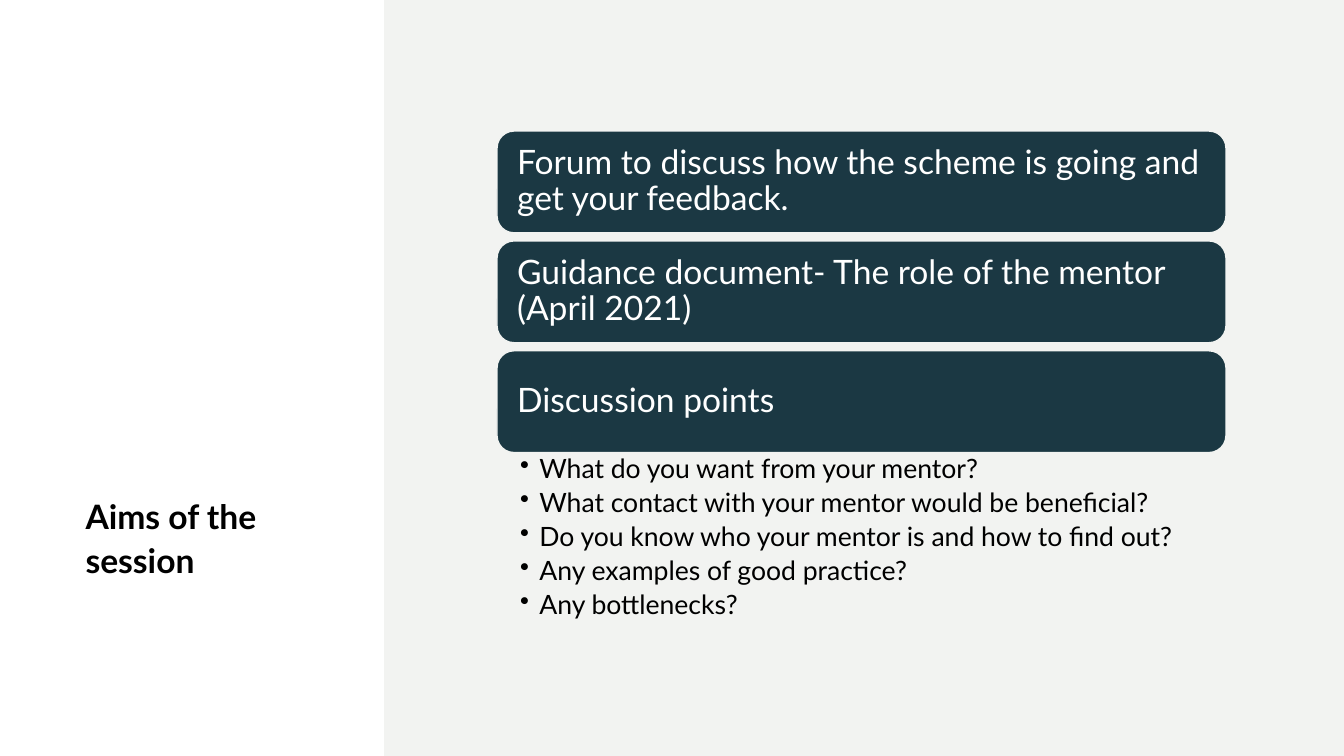
from lxml import etree
from pptx import Presentation
from pptx.dml.color import RGBColor
from pptx.enum import shapes, text
from pptx.oxml.ns import qn
from pptx.util import Inches, Pt

AIMS = [
    "Forum to discuss how the scheme is going and get your feedback.",
    "Guidance document- The role of the mentor (April 2021)",
    "Discussion points",
]
QUESTIONS = [
    "What do you want from your mentor?",
    "What contact with your mentor would be beneficial?",
    "Do you know who your mentor is and how to find out?",
    "Any examples of good practice?",
    "Any bottlenecks?",
]


def color(value):
    return RGBColor.from_string(value)


class AimsSlide:
    FONT = "Lato"
    DARK, PALE, WHITE, BLACK = "1B3843", "F2F3F1", "FFFFFF", "000000"

    def __init__(self, deck):
        self.slide = deck.slides.add_slide(deck.slide_layouts[6])

    def set_text(self, shape, lines, size, ink, spacing, anchor, insets, bold=False):
        """Fill a shape with one left-aligned paragraph per line."""
        frame = shape.text_frame
        frame.text = "\n".join(lines)
        frame.word_wrap = True
        frame.vertical_anchor = anchor
        left, top, right, bottom = map(Inches, insets)
        frame.margin_left, frame.margin_top = left, top
        frame.margin_right, frame.margin_bottom = right, bottom
        for para in frame.paragraphs:
            para.alignment = text.PP_ALIGN.LEFT
            para.line_spacing = spacing
            for span in para.runs:
                span.font.name = self.FONT
                span.font.size = Pt(size)
                span.font.bold = bold
                span.font.color.rgb = color(ink)

    def block(self, kind, bounds, fill, line=None):
        shape = self.slide.shapes.add_shape(kind, *map(Inches, bounds))
        shape.shadow.inherit = False
        shape.fill.solid()
        shape.fill.fore_color.rgb = color(fill)
        if line:
            shape.line.color.rgb = color(line)
            shape.line.width = Pt(1)
        else:
            shape.line.fill.background()
        return shape

    def panel(self, bounds):
        self.block(shapes.MSO_SHAPE.RECTANGLE, bounds, self.PALE)

    def title(self, bounds, wording):
        box = self.slide.shapes.add_textbox(*map(Inches, bounds))
        self.set_text(box, [wording], 24, self.BLACK, 1.1, text.MSO_ANCHOR.BOTTOM,
                      (0.1, 0.05, 0.1, 0.05), bold=True)

    def card(self, bounds, wording):
        shape = self.block(shapes.MSO_SHAPE.ROUNDED_RECTANGLE, bounds, self.DARK, self.PALE)
        self.set_text(shape, [wording], 24, self.WHITE, 0.9, text.MSO_ANCHOR.MIDDLE, [0.15] * 4)

    def bullets(self, bounds, lines):
        box = self.slide.shapes.add_textbox(*map(Inches, bounds))
        self.set_text(box, lines, 19, self.BLACK, 0.9, text.MSO_ANCHOR.TOP,
                      (0.23, 0.03, 0.19, 0.03))
        for para in box.text_frame.paragraphs:
            para.space_after = Pt(3.8)
            properties = para._p.get_or_add_pPr()
            properties.set("marL", str(Inches(0.19)))
            properties.set("indent", str(-Inches(0.19)))
            etree.SubElement(properties, qn("a:buChar"), char="•")


def main():
    deck = Presentation()
    deck.slide_width, deck.slide_height = Inches(13.33), Inches(7.5)
    aims = AimsSlide(deck)
    aims.title((0.75, 2.3, 2.54, 3.51), "Aims of the session")
    aims.panel((3.81, 0, 9.52, 7.5))

    left, top, width, height, pitch = 4.93, 1.3, 7.23, 1.01, 1.09
    for index, wording in enumerate(AIMS):
        aims.card((left, top + index * pitch, width, height), wording)
    aims.bullets((left, 4.49, width, 1.68), QUESTIONS)
    deck.save("out.pptx")


if __name__ == "__main__":
    main()
